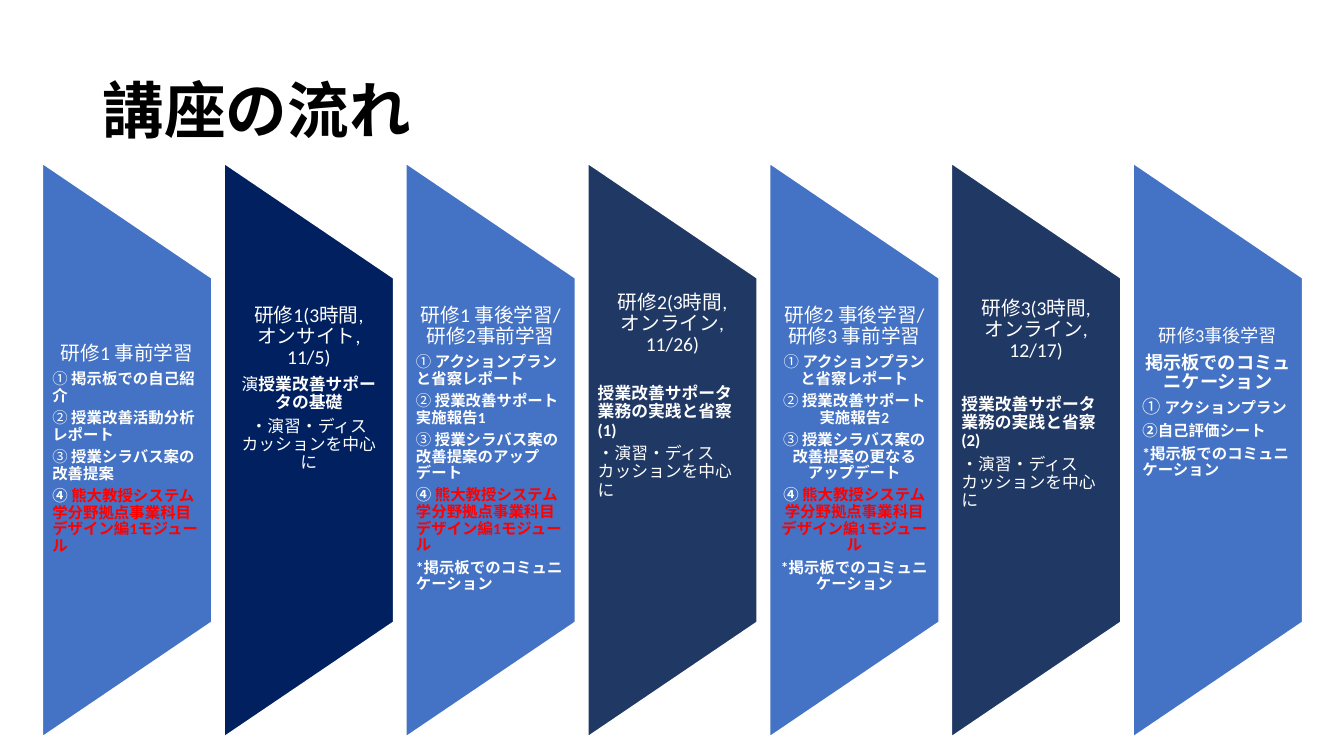
from pptx import Presentation
from pptx.dml.color import RGBColor
from pptx.enum.shapes import MSO_SHAPE as Shape
from pptx.enum.text import MSO_ANCHOR as Anchor, PP_ALIGN as Align
from pptx.oxml.ns import qn
from pptx.util import Inches, Pt

COLORS = {
    "blue": "4472C4", "navy": "002060", "dark": "203864",
    "white": "FFFFFF", "red": "FF0000", "black": "000000",
}
LATIN, JAPANESE = "Calibri", "Noto Sans CJK JP"
LEFT, CENTER = Align.LEFT, Align.CENTER

COLUMN_WIDTH, COLUMN_HEIGHT, COLUMN_TOP = 1.68, 5.69, 1.62
TEXT_TOP, TEXT_HEIGHT = 2.75, 3.41
FIRST_LEFT, LAST_LEFT = 0.42, 11.24

MODULE = "熊大教授システム学分野拠点事業科目デザイン編1モジュール"
BOARD = "掲示板でのコミュニケーション"
PRACTICE = "・演習・ディスカッションを中心に"


def add_run(paragraph, text, size, bold=False, color="white", latin=LATIN):
    run = paragraph.add_run()
    run.text = text
    font = run.font
    font.size, font.bold, font.name = Pt(size), bold, latin
    font.color.rgb = RGBColor.from_string(COLORS[color])
    east_asian = run._r.get_or_add_rPr().makeelement(qn("a:ea"), {"typeface": JAPANESE})
    font._element.find(qn("a:latin")).addnext(east_asian)


def add_text_box(left, top, width, height):
    box = slide.shapes.add_textbox(Inches(left), Inches(top), Inches(width), Inches(height))
    box.text_frame.word_wrap = True
    box.text_frame.vertical_anchor = Anchor.MIDDLE
    return box.text_frame


# Column: fill, top offset of the text (None = centred), heading size,
# heading lines, gap below the heading in points, body paragraphs.
# Body paragraph: alignment, then runs of text, size, bold and colour.
columns = [
    ("blue", None, 14, ["研修1 事前学習"], 5, [
        (LEFT, [("① ", 11), ("掲示板での自己紹介", 11, True)]),
        (LEFT, [("② ", 11), ("授業改善活動分析レポート", 11, True)]),
        (LEFT, [("③ ", 11), ("授業シラバス案の改善提案", 11, True)]),
        (LEFT, [("④ ", 11, True), (MODULE, 11, True, "red")]),
    ]),
    ("navy", 0.28, 14, ["研修1(3時間,", "オンサイト,", "11/5)"], 5, [
        (CENTER, [("演", 12), ("授業改善サポータの基礎", 12, True)]),
        (CENTER, [(PRACTICE, 12)]),
    ]),
    ("blue", None, 14, ["研修1 事後学習/ 研修2事前学習"], 5, [
        (LEFT, [("① ", 11), ("アクションプランと省察レポート", 11, True)]),
        (LEFT, [("② ", 11), ("授業改善サポート実施報告1", 11, True)]),
        (LEFT, [("③ ", 11), ("授業シラバス案の改善提案のアップデート", 11, True)]),
        (LEFT, [("④ ", 11, True), (MODULE, 11, True, "red")]),
        (LEFT, [("*" + BOARD, 11, True)]),
    ]),
    ("dark", 0.15, 14, ["研修2(3時間,", "オンライン,", "11/26)"], 21, [
        (LEFT, [("授業改善サポータ業務の実践と省察(1)", 12, True)]),
        (LEFT, [(PRACTICE, 12)]),
    ]),
    ("blue", None, 14, ["研修2 事後学習/ 研修3 事前学習"], 5, [
        (CENTER, [("① ", 11), ("アクションプランと省察レポート", 11, True)]),
        (CENTER, [("② ", 11), ("授業改善サポート実施報告2", 11, True)]),
        (CENTER, [("③ ", 11), ("授業シラバス案の改善提案の更なるアップデート", 11, True)]),
        (CENTER, [("④", 11, True), (" " + MODULE, 11, True, "red")]),
        (CENTER, [("*" + BOARD, 11, True)]),
    ]),
    ("dark", 0.21, 14, ["研修3(3時間,", "オンライン,", "12/17)"], 24, [
        (LEFT, [("授業改善サポータ業務の実践と省察(2)", 12, True)]),
        (LEFT, [(PRACTICE, 12)]),
    ]),
    ("blue", 0.49, 13, ["研修3事後学習"], 5, [
        (CENTER, [(BOARD, 13, True)]),
        (LEFT, [("① ", 13), ("アクションプラン", 11, True)]),
        (LEFT, [("②自己評価シート", 11, True)]),
        (LEFT, [("*" + BOARD, 11, True)]),
    ]),
]

presentation = Presentation()
presentation.slide_width, presentation.slide_height = Inches(13.33), Inches(7.5)
slide = presentation.slides.add_slide(presentation.slide_layouts[6])

title = add_text_box(0.92, 0.4, 11.5, 1.45).paragraphs[0]
title.line_spacing = 0.9
add_run(title, "講座の流れ", 44, True, "black", JAPANESE)

pitch = (LAST_LEFT - FIRST_LEFT) / (len(columns) - 1)
for index, (fill, offset, heading_size, heading_lines, gap, body) in enumerate(columns):
    left = FIRST_LEFT + index * pitch

    # The shape is turned a quarter, so its width runs down the slide.
    shift = (COLUMN_HEIGHT - COLUMN_WIDTH) / 2
    shape = slide.shapes.add_shape(
        Shape.FLOWCHART_MANUAL_OPERATION,
        Inches(left - shift), Inches(COLUMN_TOP + shift),
        Inches(COLUMN_HEIGHT), Inches(COLUMN_WIDTH))
    shape.rotation = 270
    shape.shadow.inherit = False
    shape.fill.solid()
    shape.fill.fore_color.rgb = RGBColor.from_string(COLORS[fill])
    shape.line.color.rgb = RGBColor.from_string(COLORS["white"])
    shape.line.width = Pt(1)

    frame = add_text_box(left, TEXT_TOP, COLUMN_WIDTH, TEXT_HEIGHT)
    frame.margin_left = frame.margin_right = Inches(0.1 if heading_size == 14 else 0.09)
    frame.margin_top = frame.margin_bottom = 0
    if offset is not None:
        frame.vertical_anchor = Anchor.TOP
        frame.margin_top = Inches(offset)

    heading = frame.paragraphs[0]
    heading.alignment, heading.line_spacing = CENTER, 0.9
    heading.space_after = Pt(gap)
    for number, line in enumerate(heading_lines):
        if number:
            heading.add_line_break()
        add_run(heading, line, heading_size)

    for alignment, runs in body:
        paragraph = frame.add_paragraph()
        paragraph.alignment, paragraph.line_spacing = alignment, 0.9
        paragraph.space_after = Pt(4)
        for run in runs:
            add_run(paragraph, *run)

presentation.save("out.pptx")
